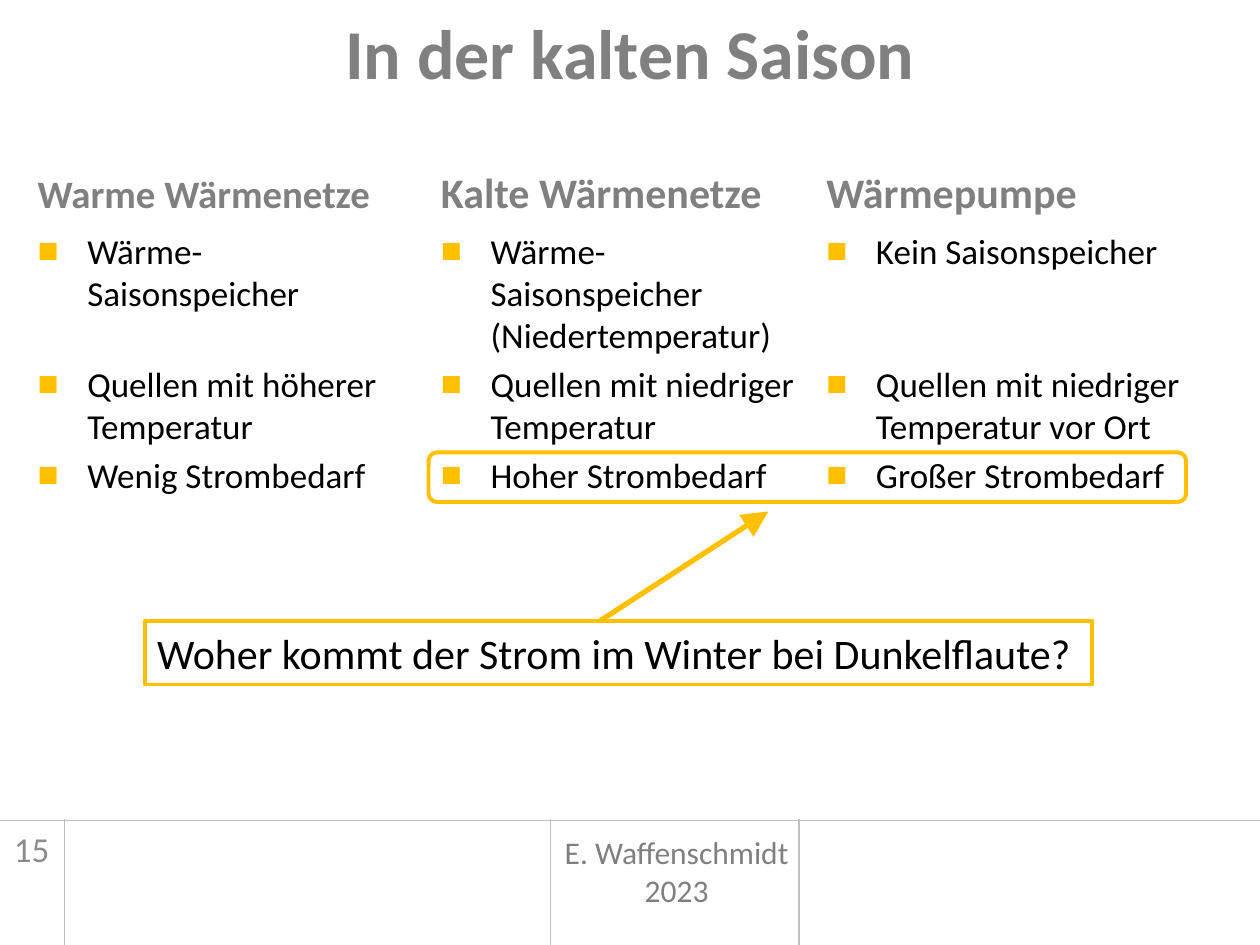
from dataclasses import dataclass

from lxml import etree
from pptx import Presentation
from pptx.dml.color import RGBColor
from pptx.enum.shapes import MSO_CONNECTOR, MSO_SHAPE
from pptx.enum.text import MSO_ANCHOR, PP_ALIGN
from pptx.oxml.ns import qn
from pptx.util import Cm, Pt

LEFT, CENTER = PP_ALIGN.LEFT, PP_ALIGN.CENTER
TOP, MIDDLE, BOTTOM = MSO_ANCHOR.TOP, MSO_ANCHOR.MIDDLE, MSO_ANCHOR.BOTTOM
RECT, ROUND = MSO_SHAPE.RECTANGLE, MSO_SHAPE.ROUNDED_RECTANGLE
STRAIGHT = MSO_CONNECTOR.STRAIGHT


@dataclass(frozen=True)
class Theme:
    font: str = "Calibri"
    gray: str = "808080"
    pale: str = "8C8C8C"
    rule: str = "BFBFBF"
    gold: str = "FFC000"
    black: str = "000000"
    title: float = 40
    head: float = 24
    body: float = 20
    foot: float = 18
    gap: float = 4       # points between bullets
    row: float = 24      # points per line of body text


@dataclass(frozen=True)
class Column:
    left: float
    width: float
    head: str
    items: tuple[str, ...]
    skip: int = 0        # lines left free below the first bullet
    size: float = 24


THEME = Theme()
INSET = (0.25, 0.13, 0.25, 0.13)

COLUMNS = (
    Column(0.51, 7.62, "Warme Wärmenetze",
           ("Wärme-Saisonspeicher", "Quellen mit höherer Temperatur",
            "Wenig Strombedarf"), skip=1, size=22.2),
    Column(8.64, 7.67, "Kalte Wärmenetze",
           ("Wärme-Saisonspeicher (Niedertemperatur)",
            "Quellen mit niedriger Temperatur", "Hoher Strombedarf")),
    Column(16.41, 7.9, "Wärmepumpe",
           ("Kein Saisonspeicher", "Quellen mit niedriger Temperatur vor Ort",
            "Großer Strombedarf"), skip=2),
)


def add_bullet(para) -> None:
    props = para._p.get_or_add_pPr()
    props.set("marL", str(Cm(1)))
    props.set("indent", str(-Cm(1)))
    tint = etree.SubElement(props, qn("a:buClr"))
    etree.SubElement(tint, qn("a:srgbClr"), val=THEME.gold)
    etree.SubElement(props, qn("a:buFont"), typeface="Arial")
    etree.SubElement(props, qn("a:buChar"), char="■")


def put_text(shape, lines: tuple[str, ...], *, size: float, color: str,
             bold: bool = False, align=LEFT, anchor=TOP, inset=INSET,
             wrap: bool = True, bullet: bool = False,
             gaps: tuple[float, ...] = ()) -> None:
    frame = shape.text_frame
    frame.word_wrap = wrap
    frame.vertical_anchor = anchor
    (frame.margin_left, frame.margin_top,
     frame.margin_right, frame.margin_bottom) = map(Cm, inset)
    for i, line in enumerate(lines):
        para = frame.add_paragraph() if i else frame.paragraphs[0]
        if bullet:
            add_bullet(para)
        if i and gaps:
            para.space_before = Pt(gaps[i - 1])
        para.alignment = align
        run = para.add_run()
        run.text = line
        run.font.name = THEME.font
        run.font.size = Pt(size)
        run.font.bold = bold
        run.font.color.rgb = RGBColor.from_string(color)


def add_box(slide, left: float, top: float, width: float, height: float):
    return slide.shapes.add_textbox(Cm(left), Cm(top), Cm(width), Cm(height))


def add_frame(slide, kind, left: float, top: float, width: float,
              height: float):
    shape = slide.shapes.add_shape(kind, Cm(left), Cm(top), Cm(width),
                                   Cm(height))
    shape.shadow.inherit = False
    shape.fill.background()
    shape.line.color.rgb = RGBColor.from_string(THEME.gold)
    shape.line.width = Pt(2.25)
    return shape


def add_line(slide, start: tuple[float, float], end: tuple[float, float],
             color: str, width: float, arrow: bool = False) -> None:
    line = slide.shapes.add_connector(STRAIGHT, *map(Cm, start + end))
    line.line.color.rgb = RGBColor.from_string(color)
    line.line.width = Pt(width)
    if arrow:
        etree.SubElement(line.line._get_or_add_ln(), qn("a:tailEnd"),
                         type="triangle", w="lg", len="lg")
    etree.SubElement(line._element.spPr, qn("a:effectLst"))


def add_column(slide, col: Column) -> None:
    put_text(add_box(slide, col.left, 3.18, col.width, 1.32), (col.head,),
             size=col.size, color=THEME.gray, bold=True, anchor=BOTTOM)
    put_text(add_box(slide, col.left, 4.5, col.width, 10.97), col.items,
             size=THEME.body, color=THEME.black, bullet=True,
             gaps=(THEME.gap + col.skip * THEME.row, THEME.gap))


def main() -> None:
    deck = Presentation()
    deck.slide_width, deck.slide_height = Cm(25.4), Cm(19.05)
    slide = deck.slides.add_slide(deck.slide_layouts[6])

    # Footer grid, author and page number
    add_line(slide, (0, 16.54), (25.4, 16.54), THEME.rule, 1)
    for x in (1.3, 11.1, 16.1):
        add_line(slide, (x, 19.05), (x, 16.51), THEME.rule, 1)
    put_text(add_box(slide, 11.1, 16.66, 5.08, 1.8),
             ("E. Waffenschmidt", "2023"), size=THEME.foot,
             color=THEME.gray, align=CENTER, wrap=False)
    put_text(add_box(slide, 0.08, 16.66, 1.12, 0.86), ("15",),
             size=THEME.body, color=THEME.pale, align=CENTER,
             anchor=BOTTOM, inset=(0, 0, 0, 0))

    # Title
    put_text(add_box(slide, 0, 0, 25.4, 3.18), ("In der kalten Saison",),
             size=THEME.title, color=THEME.gray, bold=True, align=CENTER,
             inset=(0.25, 0.2, 0.25, 0.13))

    # Three heating options
    for col in COLUMNS:
        add_column(slide, col)

    # Marked power demand and the question about it
    add_frame(slide, ROUND, 8.64, 9.12, 15.27, 1)
    ask = add_frame(slide, RECT, 2.92, 12.52, 19.1, 1.28)
    put_text(ask, ("Woher kommt der Strom im Winter bei Dunkelflaute?",),
             size=THEME.head, color=THEME.black, anchor=MIDDLE)
    add_line(slide, (12.09, 12.52), (15.49, 10.31), THEME.gold, 3, arrow=True)

    deck.save("out.pptx")


if __name__ == "__main__":
    main()
